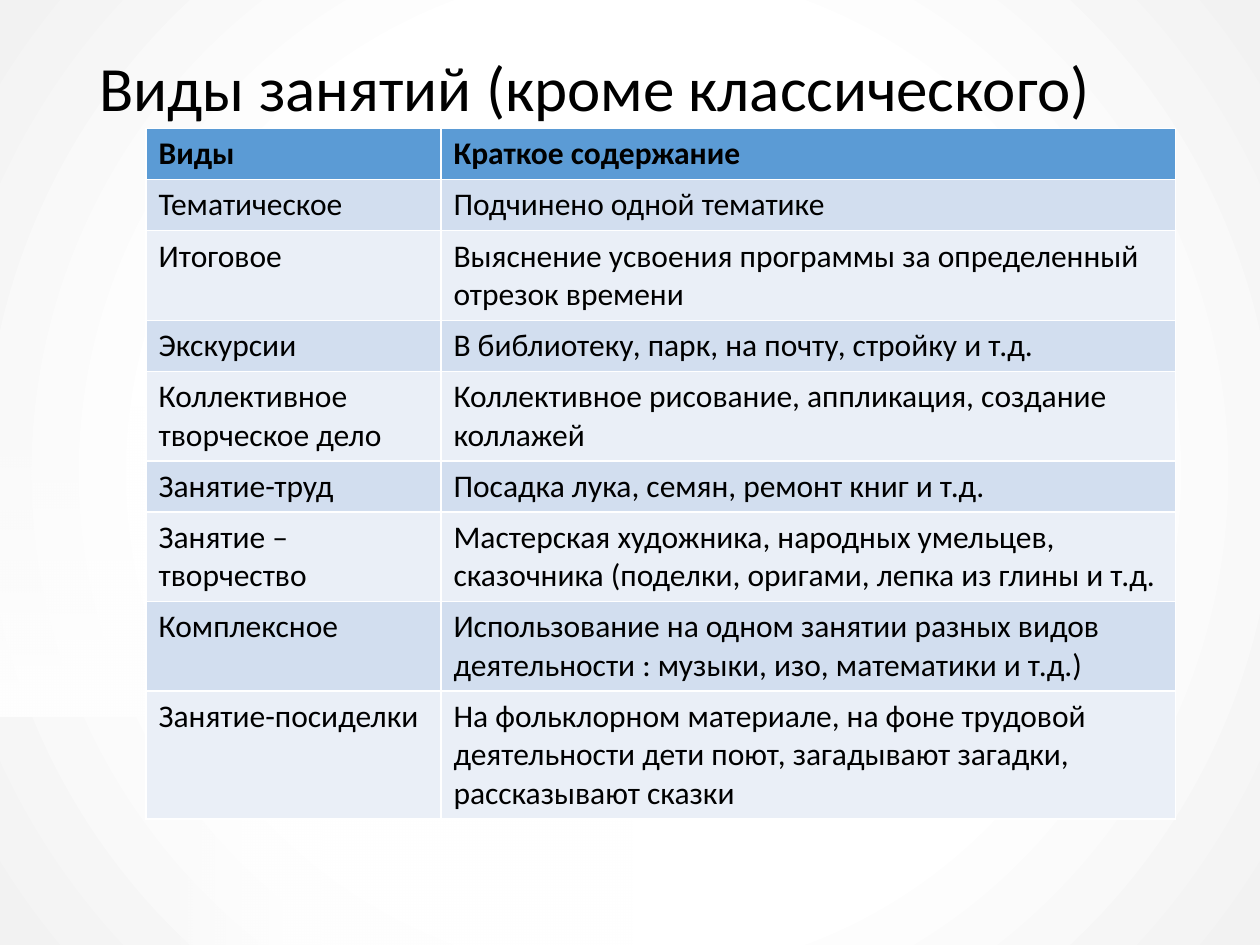
from lxml import etree
from pptx import Presentation
from pptx.dml.color import RGBColor
from pptx.enum.shapes import MSO_SHAPE
from pptx.enum.text import MSO_ANCHOR, MSO_AUTO_SIZE, PP_ALIGN
from pptx.oxml import parse_xml
from pptx.oxml.ns import nsdecls, qn
from pptx.util import Inches, Pt

RECTANGLE = MSO_SHAPE.RECTANGLE
MIDDLE = MSO_ANCHOR.MIDDLE
NO_FIT = MSO_AUTO_SIZE.NONE
LEFT = PP_ALIGN.LEFT

# Content
TITLE = "Виды занятий (кроме классического)"
# (kind, summary, text lines in the row)
LESSONS = [
    ("Виды", "Краткое содержание", 1),
    ("Тематическое", "Подчинено одной тематике", 1),
    ("Итоговое", "Выяснение усвоения программы за определенный отрезок времени", 2),
    ("Экскурсии", "В библиотеку, парк, на почту, стройку и т.д.", 1),
    ("Коллективное творческое дело",
     "Коллективное рисование, аппликация, создание коллажей", 2),
    ("Занятие-труд", "Посадка лука, семян, ремонт книг и т.д.", 1),
    ("Занятие –творчество",
     "Мастерская художника, народных умельцев, сказочника "
     "(поделки, оригами, лепка из глины и т.д.", 2),
    ("Комплексное",
     "Использование на одном занятии разных видов деятельности : "
     "музыки, изо, математики и т.д.)", 2),
    ("Занятие-посиделки",
     "На фольклорном материале, на фоне трудовой деятельности дети поют, "
     "загадывают загадки, рассказывают сказки", 3),
]

FONT = "Calibri"
COLORS = {"text": "000000", "white": "FFFFFF", "edge": "F2F2F2",
          "header": "5B9BD5", "odd": "D2DEEF", "even": "EAEFF7"}

# Layout in inches
COLUMN_WIDTHS = (2.34, 5.83)
ROW_PADDING, LINE_HEIGHT = 0.1, 0.29
# (left, top, width, height, rotation)
FADES = [(1.28, 5.69, 1.28, 1.81, 0),
         (-0.33, 3.55, 2.47, 1.81, 90),
         (2.56, 5.69, 2.47, 1.81, 180)]

RADIAL = ('<a:path path="circle">'
          '<a:fillToRect l="50000" t="50000" r="50000" b="50000"/></a:path>')
LINEAR = '<a:lin ang="10800000" scaled="0"/>'


def style(paragraph, size, bold=False):
    paragraph.font.name = FONT
    paragraph.font.size = Pt(size)
    paragraph.font.bold = bold
    paragraph.font.color.rgb = RGBColor.from_string(COLORS["text"])


def add_gradient(slide, box, rotation, stops, direction):
    """Stops are (percent, color, opacity percent)."""
    panel = slide.shapes.add_shape(RECTANGLE, *map(Inches, box))
    panel.rotation = rotation
    panel.shadow.inherit = False
    panel.line.fill.background()
    gradient = parse_xml(
        f'<a:gradFill {nsdecls("a")} rotWithShape="1"><a:gsLst/>{direction}</a:gradFill>')
    for percent, color, opacity in stops:
        stop = etree.SubElement(gradient[0], qn("a:gs"), pos=str(percent * 1000))
        fill = etree.SubElement(stop, qn("a:srgbClr"), val=COLORS[color])
        if opacity < 100:
            etree.SubElement(fill, qn("a:alpha"), val=str(opacity * 1000))
    panel._element.spPr.find(qn("a:prstGeom")).addnext(gradient)


prs = Presentation()
prs.slide_width, prs.slide_height = Inches(10), Inches(7.5)
slide = prs.slides.add_slide(prs.slide_layouts[5])

# Backdrop: radial shade with three white fades
add_gradient(slide, (0, 0, 10, 7.5), 0,
             [(0, "white", 100), (58, "white", 100), (100, "edge", 100)], RADIAL)
for *box, rotation in FADES:
    add_gradient(slide, box, rotation,
                 [(0, "white", 100), (100, "white", 0)], LINEAR)

# Title, brought in front of the backdrop
title = slide.shapes.title
slide.shapes._spTree.append(title._element)
title.left, title.top, title.width, title.height = map(Inches, (0.69, 0.18, 8.62, 1.09))
title.text_frame.text = TITLE
title.text_frame.auto_size = NO_FIT
title.text_frame.vertical_anchor = MIDDLE
heading = title.text_frame.paragraphs[0]
heading.alignment = LEFT
heading.line_spacing = 0.9
style(heading, 36)

# Table of lesson kinds
heights = [ROW_PADDING + LINE_HEIGHT * lines for *_, lines in LESSONS]
table = slide.shapes.add_table(
    len(LESSONS), len(COLUMN_WIDTHS), Inches(1.16), Inches(1.02),
    Inches(sum(COLUMN_WIDTHS)), Inches(sum(heights))).table
for column, width in zip(table.columns, COLUMN_WIDTHS):
    column.width = Inches(width)
for index, (kind, summary, _) in enumerate(LESSONS):
    table.rows[index].height = Inches(heights[index])
    band = "header" if index == 0 else "odd" if index % 2 else "even"
    for cell, text in zip(table.rows[index].cells, (kind, summary)):
        cell.text = text
        cell.fill.solid()
        cell.fill.fore_color.rgb = RGBColor.from_string(COLORS[band])
        style(cell.text_frame.paragraphs[0], 18, bold=index == 0)

prs.save("out.pptx")
